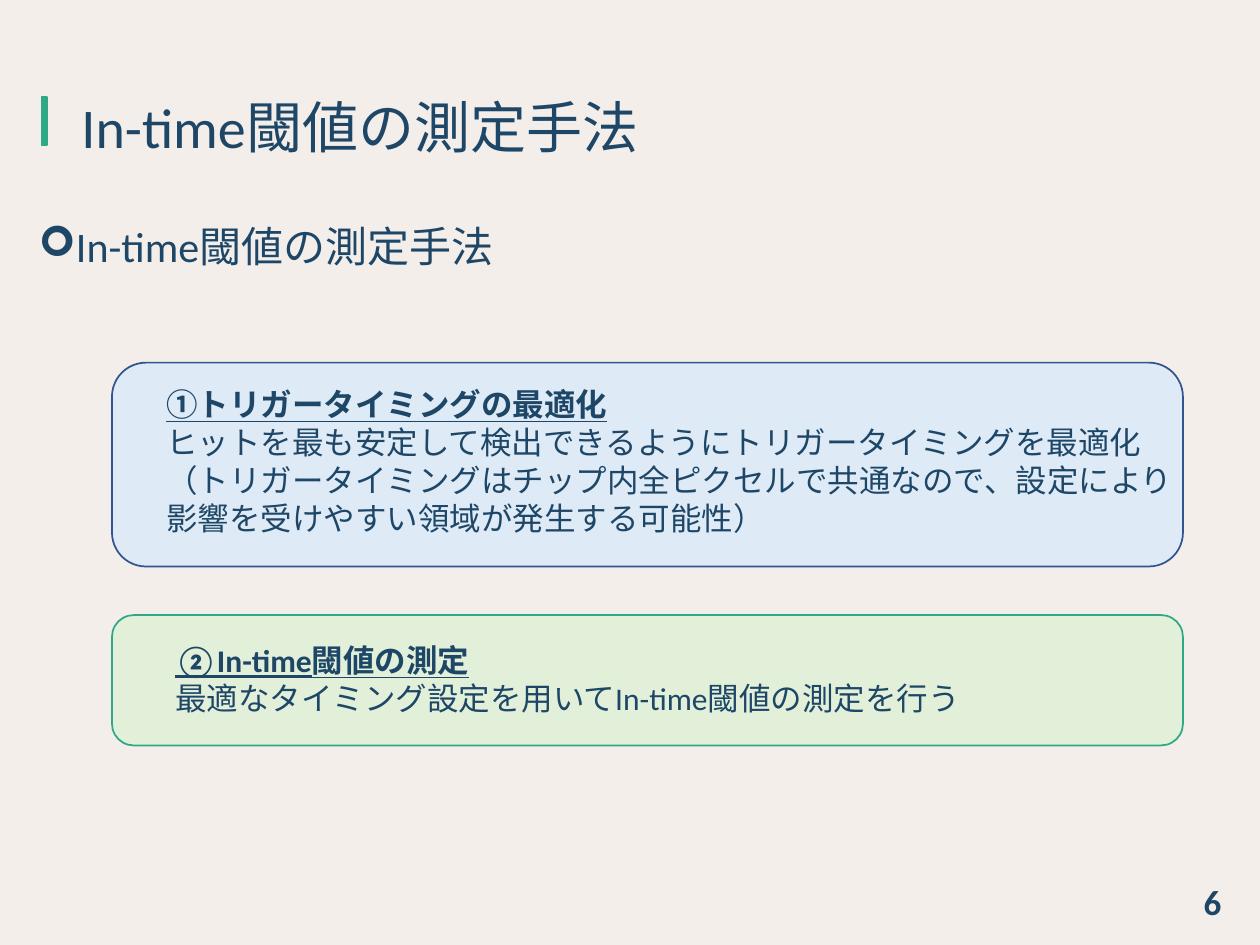
"""Build the slide on how the in-time threshold is measured."""
from dataclasses import dataclass

from lxml.etree import SubElement
from pptx import Presentation
from pptx.dml.color import RGBColor
from pptx.enum.shapes import MSO_SHAPE as Shape
from pptx.enum.text import MSO_ANCHOR as Anchor, PP_ALIGN as Align
from pptx.oxml.ns import qn
from pptx.util import Pt

NAVY = RGBColor(0x1E, 0x46, 0x67)
GREEN = RGBColor(0x2F, 0xA8, 0x85)
BLUE = RGBColor(0x32, 0x54, 0x91)
SAND = RGBColor(0xF3, 0xEE, 0xEA)
SKY = RGBColor(0xDE, 0xEB, 0xF7)
MINT = RGBColor(0xE2, 0xF0, 0xD9)
FONT = "Calibri"
TOPIC = "In-time閾値の測定手法"


@dataclass(frozen=True)
class Box:
    left: float
    top: float
    width: float
    height: float

    def lengths(self) -> tuple:
        return Pt(self.left), Pt(self.top), Pt(self.width), Pt(self.height)


@dataclass(frozen=True)
class Panel:
    box: Box
    kind: Shape
    fill: RGBColor
    line: RGBColor


@dataclass(frozen=True)
class Step:
    box: Box
    head: str
    body: tuple[str, ...]


PANELS = (
    Panel(Box(23.75, 55.5, 3, 27.5), Shape.RECTANGLE, GREEN, GREEN),
    Panel(Box(64, 207.25, 612, 116.5), Shape.ROUNDED_RECTANGLE, SKY, BLUE),
    Panel(Box(64, 351.5, 612, 74.5), Shape.ROUNDED_RECTANGLE, MINT, GREEN),
)

STEPS = (
    Step(Box(52, 216.75, 637, 94.5), "①トリガータイミングの最適化", (
        "ヒットを最も安定して検出できるようにトリガータイミングを最適化",
        "（トリガータイミングはチップ内全ピクセルで共通なので、"
        "設定により影響を受けやすい領域が発生する可能性）",
    )),
    Step(Box(57, 363, 547, 51), "②In-time閾値の測定", (
        "最適なタイミング設定を用いてIn-time閾値の測定を行う",
    )),
)


def add_panel(slide, panel: Panel) -> None:
    shape = slide.shapes.add_shape(panel.kind, *panel.box.lengths())
    shape.shadow.inherit = False
    shape.fill.solid()
    shape.fill.fore_color.rgb = panel.fill
    shape.line.color.rgb = panel.line
    shape.line.width = Pt(1)


def add_frame(slide, box: Box, anchor: Anchor = Anchor.TOP):
    frame = slide.shapes.add_textbox(*box.lengths()).text_frame
    frame.word_wrap = True
    frame.vertical_anchor = anchor
    return frame


def add_run(para, text: str, size: float, strong: bool = False,
            under: bool = False) -> None:
    run = para.add_run()
    run.text = text
    font = run.font
    font.name, font.size = FONT, Pt(size)
    font.bold, font.underline = strong, under
    font.color.rgb = NAVY


def indent(para, left: float, first: float = 0) -> None:
    props = para._p.get_or_add_pPr()
    props.set("marL", str(Pt(left)))
    props.set("indent", str(Pt(first)))


def add_title(slide) -> None:
    para = add_frame(slide, Box(39.5, 47, 620.5, 54.5), Anchor.MIDDLE).paragraphs[0]
    para.line_spacing = 0.9
    add_run(para, TOPIC, 32)


def add_bullet(slide) -> None:
    frame = add_frame(slide, Box(15, 108, 690, 421))
    frame.margin_top = Pt(21.5)
    para = frame.paragraphs[0]
    para.line_spacing = 0.9
    indent(para, 18, -18)
    props = para._p.get_or_add_pPr()
    SubElement(props, qn("a:buFont")).set("typeface", "Wingdings")
    SubElement(props, qn("a:buChar")).set("char", "➢")
    add_run(para, TOPIC, 24)


def add_step(slide, step: Step) -> None:
    frame = add_frame(slide, step.box)
    para = frame.paragraphs[0]
    indent(para, 36)
    add_run(para, step.head, 18, strong=True, under=True)
    for text in step.body:
        para = frame.add_paragraph()
        indent(para, 36)
        add_run(para, text, 18)


def add_number(slide) -> None:
    para = add_frame(slide, Box(543, 500.5, 162, 29), Anchor.MIDDLE).paragraphs[0]
    para.alignment = Align.RIGHT
    add_run(para, "6", 20, strong=True)


def main() -> None:
    deck = Presentation()
    deck.slide_width, deck.slide_height = Pt(720), Pt(540)
    slide = deck.slides.add_slide(deck.slide_layouts[6])
    slide.background.fill.solid()
    slide.background.fill.fore_color.rgb = SAND
    for panel in PANELS:
        add_panel(slide, panel)
    add_title(slide)
    add_bullet(slide)
    add_number(slide)
    for step in STEPS:
        add_step(slide, step)
    deck.save("out.pptx")


if __name__ == "__main__":
    main()
